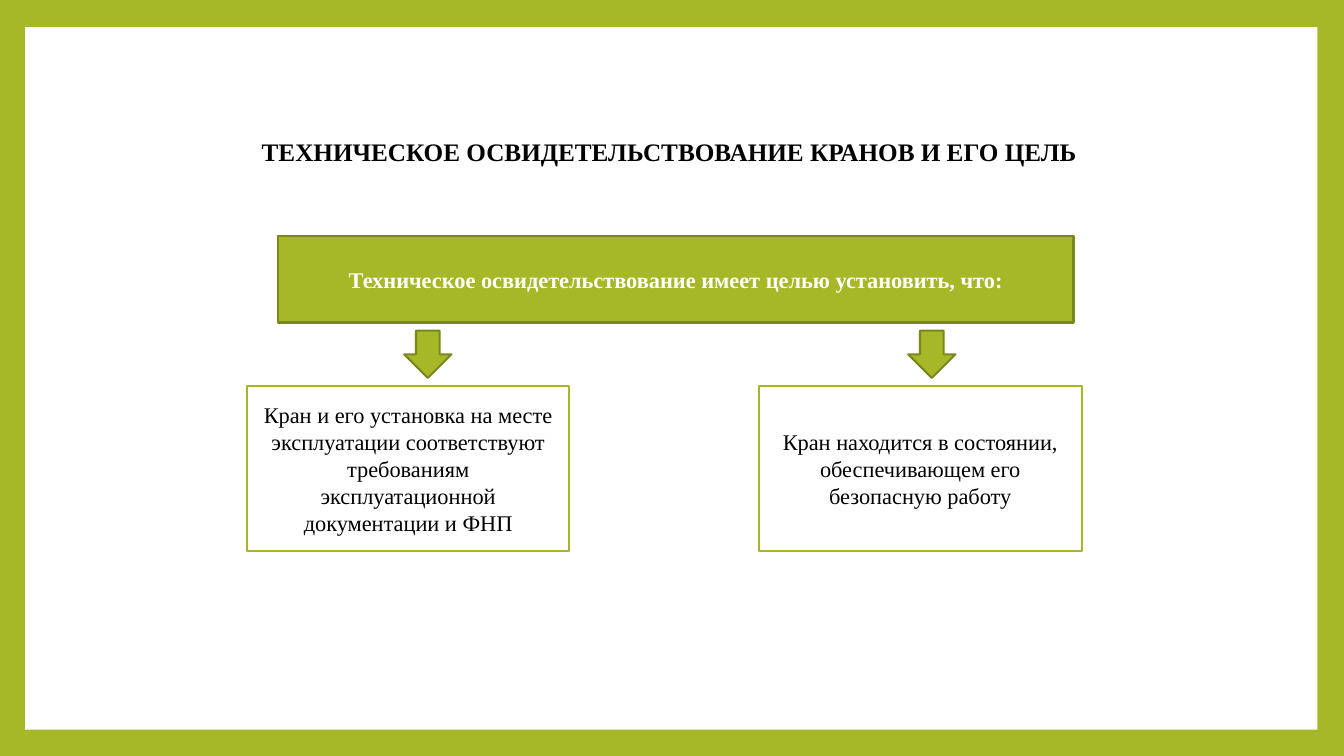
from dataclasses import dataclass

from pptx import Presentation
from pptx.dml.color import RGBColor
from pptx.enum.shapes import MSO_SHAPE
from pptx.enum.text import MSO_ANCHOR, MSO_AUTO_SIZE, PP_ALIGN
from pptx.util import Pt


@dataclass(frozen=True)
class Theme:
    font: str = "Times New Roman"
    green: str = "A6B727"
    olive: str = "7B871D"
    white: str = "FFFFFF"
    black: str = "000000"
    head: float = 18
    body: float = 16
    line: float = 1.5


THEME = Theme()

GOALS = [
    ["Кран и его установка на месте",
     "эксплуатации соответствуют",
     "требованиям эксплуатационной",
     "документации и ФНП"],
    ["Кран находится в состоянии,",
     "обеспечивающем его",
     "безопасную работу"],
]


def color(code):
    return RGBColor.from_string(code)


def write(shape, lines, size, ink, bold=False):
    """Fill a shape with centred lines, one paragraph each."""
    frame = shape.text_frame
    frame.word_wrap = True
    frame.auto_size = MSO_AUTO_SIZE.NONE
    frame.vertical_anchor = MSO_ANCHOR.MIDDLE
    for i, line in enumerate(lines):
        para = frame.add_paragraph() if i else frame.paragraphs[0]
        para.alignment = PP_ALIGN.CENTER
        run = para.add_run()
        run.text = line
        font = run.font
        font.name = THEME.font
        font.size = Pt(size)
        font.bold = bold
        font.color.rgb = color(ink)


def place(shape, box):
    shape.left, shape.top, shape.width, shape.height = map(Pt, box)


def draw(slide, kind, box, fill, edge=None):
    """Add a flat preset shape; without an edge colour it has no outline."""
    shape = slide.shapes.add_shape(kind, *map(Pt, box))
    shape.shadow.inherit = False
    shape.fill.solid()
    shape.fill.fore_color.rgb = color(fill)
    if edge:
        shape.line.color.rgb = color(edge)
        shape.line.width = Pt(THEME.line)
    else:
        shape.line.fill.background()
    return shape


def set_title(slide, text):
    title = slide.shapes.title
    place(title, (154.1, 84.2, 648, 50.4))
    write(title, [text], THEME.head, THEME.black, bold=True)
    title.text_frame.paragraphs[0].line_spacing = 0.9


def add_panel(slide):
    """Put the white sheet behind the title."""
    panel = draw(slide, MSO_SHAPE.RECTANGLE, (18, 19.4, 923, 501.8), THEME.white)
    slide.shapes.title.element.addprevious(panel.element)


def add_goal(slide, index, lines):
    """Add one goal box and the arrow that leads to it."""
    box = draw(slide, MSO_SHAPE.RECTANGLE,
               (176.4 + 365.8 * index, 275.8, 230.4, 118.1),
               THEME.white, THEME.green)
    write(box, lines, THEME.body, THEME.black)
    draw(slide, MSO_SHAPE.DOWN_ARROW,
         (288.7 + 360 * index, 236.2, 33.8, 33.8), THEME.green, THEME.olive)


def main():
    deck = Presentation()
    deck.slide_width, deck.slide_height = Pt(960), Pt(540)
    slide = deck.slides.add_slide(deck.slide_layouts.get_by_name("Title Only"))
    slide.background.fill.solid()
    slide.background.fill.fore_color.rgb = color(THEME.green)

    set_title(slide, "ТЕХНИЧЕСКОЕ ОСВИДЕТЕЛЬСТВОВАНИЕ КРАНОВ И ЕГО ЦЕЛЬ")
    add_panel(slide)
    banner = draw(slide, MSO_SHAPE.RECTANGLE, (198.7, 168.5, 568.1, 61.9),
                  THEME.green, THEME.olive)
    write(banner, ["Техническое освидетельствование имеет целью установить, что:"],
          THEME.body, THEME.white, bold=True)
    for index, lines in enumerate(GOALS):
        add_goal(slide, index, lines)

    deck.save("out.pptx")


if __name__ == "__main__":
    main()
